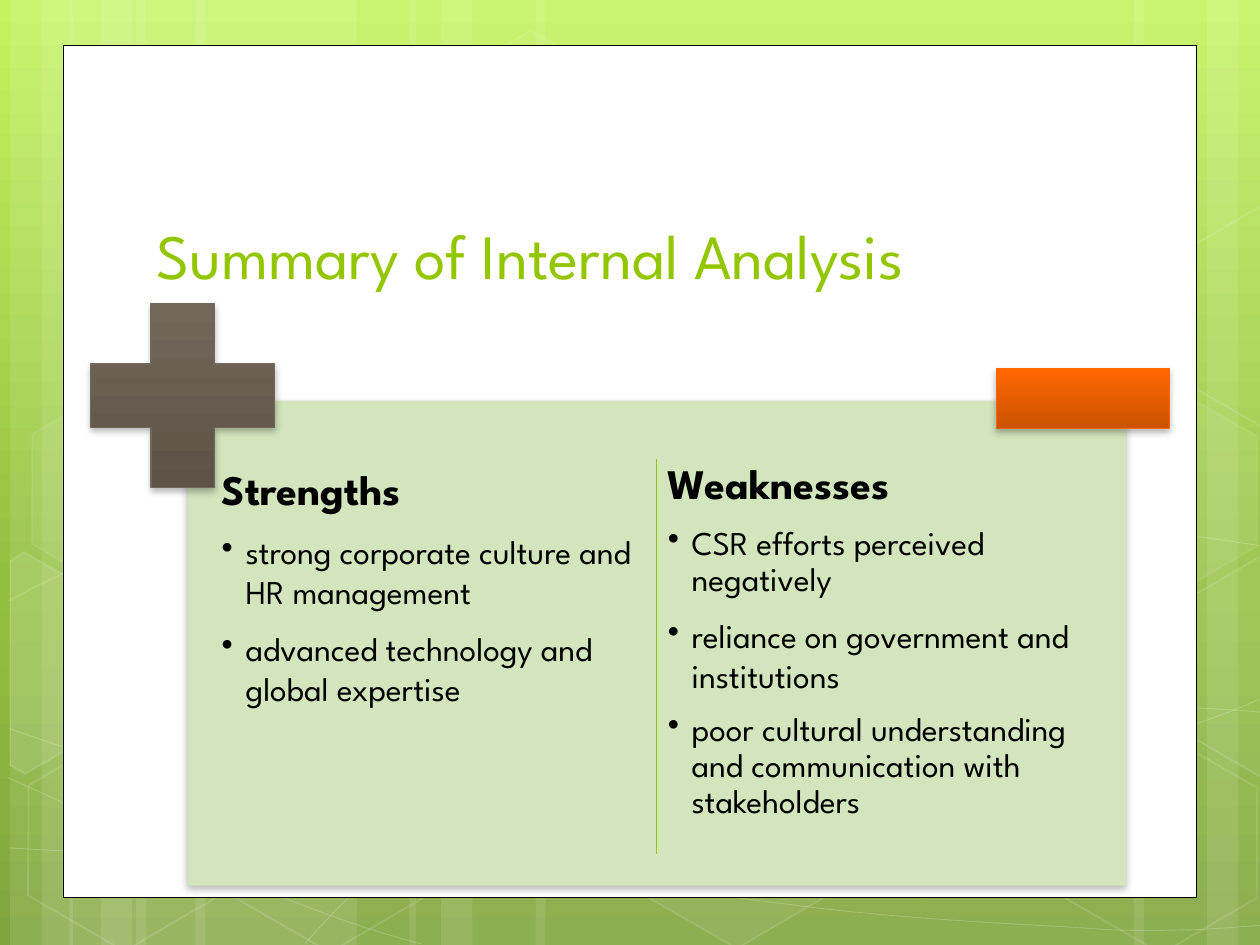
from dataclasses import dataclass
from math import cos, radians, sin
from typing import Optional

from lxml.etree import SubElement
from pptx import Presentation
from pptx.dml.color import RGBColor
from pptx.enum.shapes import MSO_CONNECTOR, MSO_SHAPE
from pptx.enum.text import MSO_ANCHOR
from pptx.oxml.ns import qn
from pptx.util import Cm, Pt

FONT = "League Spartan"
HUE = {"white": "FFFFFF", "black": "000000", "lime": "94C600", "pale": "D2E5BD",
       "brown": "71685A", "umber": "5C5346", "orange": "FF6700", "rust": "CB5200",
       "top": "C3F35F", "mid": "93BF3F", "low": "81A53E"}


@dataclass
class Hex:
    left: float
    top: float
    fill: int  # opacity in percent, 0 for none
    line: int


@dataclass
class Shard:
    mid: tuple  # centre of the turned frame
    fill: int
    points: list


@dataclass
class Item:
    text: str
    space: float = 1.0


@dataclass
class Column:
    left: float
    head: Item
    items: list


STRIPES = [(1.08, 1.75), (0.08, 0.5), (0.33, 0.83), (1.55, 1.75), (0.55, 0.5), (0.8, 0.83),
           (7.33, 1.75), (9.58, 0.5), (9, 0.83), (4.25, 3.08), (3.25, 0.5), (3.5, 0.83)]

# Each curve: a start, then three points per cubic segment
CURVES = [
    [(0.07, 6.73), (0.61, 6.76), (1.15, 6.79), (1.9, 6.78), (2.65, 6.77), (3.58, 6.75),
     (4.58, 6.65), (5.58, 6.55), (7, 6.36), (7.92, 6.17), (8.83, 5.98), (9.77, 5.68),
     (10.07, 5.51)],
    [(0.07, 4.77), (0.36, 4.61), (0.65, 4.46), (1.21, 4.31), (1.78, 4.16), (2.59, 3.94),
     (3.47, 3.87), (4.36, 3.8), (5.44, 3.79), (6.54, 3.87), (7.64, 3.95), (9.47, 4.26),
     (10.07, 4.34)],
    [(0.06, 6.17), (1.27, 6.72), (2.47, 7.27), (3.34, 7.49)],
    [(0.07, 5.78), (0.38, 5.89), (0.7, 6), (1.28, 6.16), (1.86, 6.31), (2.73, 6.56),
     (3.57, 6.73), (4.4, 6.9), (5.45, 7.08), (6.28, 7.18), (7.11, 7.29), (8, 7.33),
     (8.53, 7.36), (9.05, 7.4), (9.19, 7.38), (9.45, 7.38), (9.71, 7.37), (9.89, 7.35),
     (10.07, 7.34)],
    [(2.42, 7.49), (2.6, 7.29), (2.78, 7.09), (3.02, 6.91), (3.26, 6.73), (3.6, 6.53),
     (3.88, 6.39), (4.16, 6.25), (4.33, 6.19), (4.7, 6.09), (5.06, 5.99), (5.73, 5.85),
     (6.08, 5.78), (6.44, 5.71), (6.49, 5.71), (6.8, 5.69), (7.11, 5.66), (7.6, 5.63),
     (7.94, 5.62), (8.29, 5.61), (8.86, 5.62), (8.86, 5.62), (9.08, 5.62), (9.3, 5.62),
     (9.53, 5.62), (9.71, 5.63), (9.88, 5.64), (9.97, 5.65), (10.06, 5.66), (10.03, 5.65),
     (10.06, 5.66)],
]

CELLS = [
    Hex(3.34, 0.36, 4, 8), Hex(4.97, 5.89, 6, 12),
    Shard((0.36, 5.35), 10, [(0.08, 4.45), (0.19, 4.38), (0.96, 4.82), (0.95, 5.7),
                             (0.2, 6.14), (0.08, 6.07)]),
    Hex(0.11, 5.91, 0, 12), Hex(0.14, 3.12, 7, 8), Hex(1.74, 5.92, 0, 12),
    Hex(7.53, 4.53, 10, 12), Hex(8.34, 5.93, 0, 12), Hex(8.34, 3.14, 7, 8),
    Shard((9.85, 5.2), 4, [(9.26, 4.85), (10.01, 4.41), (10.09, 4.46), (10.09, 6.13),
                           (10.02, 6.17), (9.26, 5.73)]),
    Shard((9.85, 2.41), 0, [(9.26, 2.07), (10.01, 1.63), (10.1, 1.68), (10.09, 3.35),
                            (10.02, 3.39), (9.26, 2.95)]),
]

COLUMNS = [
    Column(1.71, Item("Strengths"), [
        Item("strong corporate culture and HR management"),
        Item("advanced technology and global expertise")]),
    Column(5.25, Item("Weaknesses", 0.9), [
        Item("CSR efforts perceived negatively", 0.9),
        Item("reliance on government and institutions"),
        Item("poor cultural understanding and communication with stakeholders", 0.9)]),
]


def inch(size: float) -> Cm:
    return Cm(size * 2.54)


def tint(name: str) -> RGBColor:
    return RGBColor.from_string(HUE[name])


def fade(shape, where: str, part: int) -> None:
    """Set the opacity of a solid fill, in percent."""
    color = shape.element.spPr.find(f"{where}{qn('a:solidFill')}/{qn('a:srgbClr')}")
    SubElement(color, qn("a:alpha"), val=str(part * 1000))


def blend(fill, root, stops: list) -> None:
    """Fill from top to bottom with (percent, colour) stops."""
    fill.gradient()
    fill.gradient_angle = 270
    group = root.find(f".//{qn('a:gsLst')}")
    group.clear()
    for place, name in stops:
        stop = SubElement(group, qn("a:gs"), pos=str(place * 1000))
        SubElement(stop, qn("a:srgbClr"), val=HUE[name])


def paint(shape, fill=None, part=100, line=None, width=1.0, ghost=100) -> None:
    """Style a shape; a list as fill makes a gradient."""
    shape.shadow.inherit = False
    if isinstance(fill, list):
        blend(shape.fill, shape.element.spPr, fill)
    elif fill and part:
        shape.fill.solid()
        shape.fill.fore_color.rgb = tint(fill)
        if part < 100:
            fade(shape, "", part)
    else:
        shape.fill.background()
    if line is None:
        shape.line.fill.background()
        return
    shape.line.color.rgb = tint(line)
    shape.line.width = Pt(width)
    if ghost < 100:
        fade(shape, f"{qn('a:ln')}/", ghost)


def block(slide, kind, box: tuple, **style):
    shape = slide.shapes.add_shape(kind, *map(inch, box))
    paint(shape, **style)
    return shape


def shade(shape) -> None:
    """Add a soft shadow below."""
    effect = shape.element.spPr.find(qn("a:effectLst"))
    shadow = SubElement(effect, qn("a:outerShdw"), blurRad=str(Pt(4)), dist=str(Pt(2)),
                        dir="5400000", rotWithShape="0")
    color = SubElement(shadow, qn("a:srgbClr"), val=HUE["black"])
    SubElement(color, qn("a:alpha"), val="28000")


def trace(slide, points: list, close: bool):
    pen = slide.shapes.build_freeform(*map(inch, points[0]))
    pen.add_line_segments([tuple(map(inch, spot)) for spot in points[1:]], close=close)
    return pen.convert_to_shape()


def curve(slide, points: list) -> None:
    """Draw a line, then join its points by threes into cubic arcs."""
    shape = trace(slide, points, False)
    lines = list(shape.element.iter(qn("a:lnTo")))
    track = lines[0].getparent()
    for step in range(0, len(lines), 3):
        arc = SubElement(track, qn("a:cubicBezTo"))
        for node in lines[step:step + 3]:
            arc.append(node[0])
            track.remove(node)
    paint(shape, line="white", width=0.5, ghost=20)


def cell(slide, item) -> None:
    """Draw a whole or cut hexagon, turned by 30 degrees."""
    if isinstance(item, Hex):
        shape = block(slide, MSO_SHAPE.HEXAGON, (item.left, item.top, 1.75, 1.52),
                      fill="white", part=item.fill, line="white", ghost=item.line)
        shape.adjustments[0] = 0.285
    else:
        (x, y), turn = item.mid, radians(-30)
        points = [(x + (a - x) * cos(turn) - (b - y) * sin(turn),
                   y + (a - x) * sin(turn) + (b - y) * cos(turn)) for a, b in item.points]
        shape = trace(slide, points, True)
        paint(shape, fill="white", part=item.fill, line="white", ghost=12)
    shape.rotation = 30


def frame(slide, box: tuple, side: float = 0.05, anchor=MSO_ANCHOR.TOP):
    body = slide.shapes.add_textbox(*map(inch, box)).text_frame
    body.word_wrap = True
    body.vertical_anchor = anchor
    body.margin_left = body.margin_right = inch(side)
    body.margin_top = body.margin_bottom = inch(0.05)
    return body


def write(body, text: str, *, size: float, color: str = "black", bold: bool = False,
          space: float = 1.0, after: float = 0, bullet: Optional[str] = None) -> None:
    """Add a paragraph, using the first one while it is empty."""
    first = body.paragraphs[0]
    para = body.add_paragraph() if first.runs else first
    para.line_spacing, para.space_after = space, Pt(after)
    if bullet:
        para.level = 1
        props = para._p.get_or_add_pPr()
        props.set("marL", str(inch(0.19)))
        props.set("indent", str(-inch(0.19)))
        SubElement(props, qn("a:buChar"), char=bullet)
    run = para.add_run()
    run.text = text
    run.font.name, run.font.size, run.font.bold = FONT, Pt(size), bold
    run.font.color.rgb = tint(color)


def main() -> None:
    deck = Presentation()
    deck.slide_width, deck.slide_height = inch(10), inch(7.5)
    slide = deck.slides.add_slide(deck.slide_layouts[6])

    # Backdrop
    blend(slide.background.fill, slide.element, [(0, "top"), (62, "mid"), (100, "low")])
    for left, width in STRIPES:
        block(slide, MSO_SHAPE.RECTANGLE, (left, 0, width, 7.5), fill="white", part=10)
    for points in CURVES:
        curve(slide, points)
    for item in CELLS:
        cell(slide, item)

    # Page and panel
    block(slide, MSO_SHAPE.RECTANGLE, (0.5, 0.36, 9, 6.76), fill="white", line="black", width=0.5)
    shade(block(slide, MSO_SHAPE.RECTANGLE, (1.49, 3.18, 7.45, 3.85), fill="pale"))

    # Columns of text
    for column in COLUMNS:
        body = frame(slide, (column.left, 3.63, 3.46, 3.29))
        write(body, column.head.text, size=24, bold=True, space=column.head.space, after=10)
        for item in column.items:
            write(body, item.text, size=19, space=item.space, after=10, bullet="•")

    # Plus and minus signs
    plus = block(slide, MSO_SHAPE.CROSS, (0.72, 2.41, 1.46, 1.46),
                 fill=[(0, "brown"), (100, "umber")], line="brown", width=0.75)
    plus.adjustments[0] = 0.328
    minus = block(slide, MSO_SHAPE.RECTANGLE, (7.91, 2.93, 1.37, 0.47),
                  fill=[(0, "orange"), (100, "rust")], line="orange", width=0.75)
    for sign in (plus, minus):
        shade(sign)

    # Divider
    rule = slide.shapes.add_connector(MSO_CONNECTOR.STRAIGHT, *map(inch, (5.21, 3.64, 5.21, 6.78)))
    rule.line.color.rgb, rule.line.width = tint("lime"), Pt(0.75)
    SubElement(rule.element.spPr, qn("a:effectLst"))

    # Title
    title = frame(slide, (1.14, 1.12, 7.68, 1.25), side=0.1, anchor=MSO_ANCHOR.BOTTOM)
    write(title, "Summary of Internal Analysis", size=36, color="lime")

    deck.save("out.pptx")


if __name__ == "__main__":
    main()
